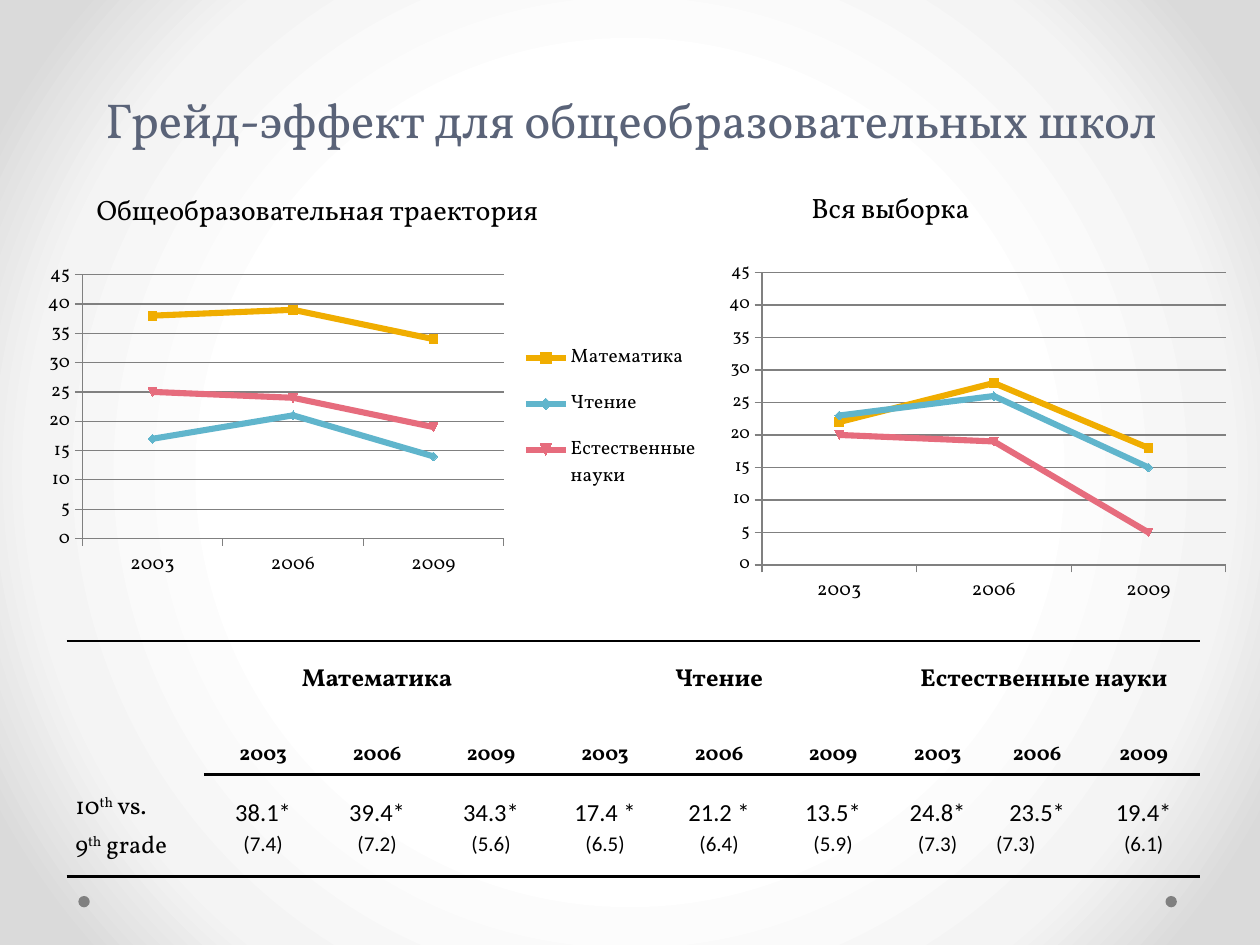
from dataclasses import dataclass
from lxml import etree
from pptx import Presentation, util as u
from pptx.chart.data import CategoryChartData
from pptx.dml.color import RGBColor
from pptx.enum import chart as ch, shapes, text
from pptx.oxml import ns, parse_xml

Pt = u.Pt
MID, LEFT = text.PP_ALIGN.CENTER, text.PP_ALIGN.LEFT
YEARS = ["2003", "2006", "2009"]


@dataclass(frozen=True)
class Theme:
    serif: str = "Vollkorn"
    sans: str = "Calibri"
    ink: str = "000000"
    title: str = "5A6378"
    gray: str = "808080"
    lines: tuple = ("F0AD00", "60B5CC", "E66C7D")
    stops: tuple = ((50, "FFFFFF"), (76, "F4F4F4"), (92, "DADADA"))
    huge: float = 28
    head: float = 16
    body: float = 14
    small: float = 12
    axis: float = 11


class Deck:
    """Build slide parts in one style."""

    def __init__(self, theme):
        self.t = theme
        self.prs = Presentation()
        self.prs.slide_width, self.prs.slide_height = Pt(720), Pt(540)
        self.slide = self.prs.slides.add_slide(self.prs.slide_layouts[6])

    def back(self):
        fill = self.slide.background.fill
        fill.gradient()
        grad = self.slide.background._cSld.find(".//" + ns.qn("a:gradFill"))
        stops = "".join(
            f'<a:gs pos="{pos * 1000}"><a:srgbClr val="{tint}"/></a:gs>'
            for pos, tint in self.t.stops)
        new = parse_xml(
            f'<a:gradFill {ns.nsdecls("a")} rotWithShape="1"><a:gsLst>{stops}</a:gsLst>'
            '<a:path path="circle"><a:fillToRect l="50000" t="50000" r="50000" b="50000"/>'
            '</a:path></a:gradFill>')
        grad.getparent().replace(grad, new)

    def font(self, font, size, tint=None, face=None, bold=False):
        font.size, font.bold = Pt(size), bold
        font.name = face or self.t.serif
        font.color.rgb = RGBColor.from_string(tint or self.t.ink)

    def dot(self, x, y, size):
        dot = self.slide.shapes.add_shape(
            shapes.MSO_SHAPE.OVAL, Pt(x), Pt(y), Pt(size), Pt(size))
        dot.shadow.inherit = False
        dot.fill.solid()
        dot.fill.fore_color.rgb = RGBColor.from_string(self.t.gray)
        dot.line.fill.background()

    def text(self, box, words, size, tint=None, align=LEFT, space=None):
        frame = self.slide.shapes.add_textbox(*map(Pt, box)).text_frame
        frame.word_wrap = True
        frame.text = words
        para = frame.paragraphs[0]
        para.alignment = align
        self.font(para.runs[0].font, size, tint)
        if space:
            frame.vertical_anchor = text.MSO_ANCHOR.BOTTOM
            para.line_spacing = Pt(space)

    def layout(self, owner, index, rect, inner=False):
        for old in owner.findall(ns.qn("c:layout")):
            owner.remove(old)
        node = etree.Element(ns.qn("c:layout"))
        man = etree.SubElement(node, ns.qn("c:manualLayout"))
        pairs = [("layoutTarget", "inner")] if inner else []
        pairs += [("xMode", "edge"), ("yMode", "edge"), *zip("xywh", rect)]
        for tag, val in pairs:
            etree.SubElement(man, ns.qn("c:" + tag)).set("val", str(val))
        owner.insert(index, node)

    def chart(self, box, data, size, plot, key=None):
        cats = CategoryChartData()
        cats.categories = YEARS
        for name, vals in data.items():
            cats.add_series(name, vals)
        chart = self.slide.shapes.add_chart(
            ch.XL_CHART_TYPE.LINE_MARKERS, *map(Pt, box), cats).chart
        self.font(chart.font, size)
        chart.has_title = False
        chart.has_legend = bool(key)
        if key:
            legend = chart.legend
            legend.position = ch.XL_LEGEND_POSITION.RIGHT
            legend.include_in_layout = False
            self.font(legend.font, self.t.axis)
            self.layout(legend._element, 1, key)
        gray = RGBColor.from_string(self.t.gray)
        val, cat = chart.value_axis, chart.category_axis
        val.minimum_scale, val.maximum_scale, val.major_unit = 0, 45, 5
        val.has_major_gridlines = True
        self.font(cat.tick_labels.font, self.t.axis)
        for axis in (val, cat):
            axis.major_tick_mark = ch.XL_TICK_MARK.OUTSIDE
            axis.format.line.color.rgb = gray
        val.major_gridlines.format.line.color.rgb = gray
        chart.plots[0].vary_by_categories = False
        for row, tint in zip(chart.plots[0].series, self.t.lines):
            color = RGBColor.from_string(tint)
            row.smooth = False
            row.format.line.width = Pt(3.5)
            row.format.line.color.rgb = color
            row.marker.size = 5
            row.marker.format.fill.solid()
            row.marker.format.fill.fore_color.rgb = color
            row.marker.format.line.color.rgb = color
        self.layout(chart._chartSpace.find(".//" + ns.qn("c:plotArea")), 0, plot, True)

    def grid(self, box, cols, rows):
        grid = self.slide.shapes.add_table(len(rows), len(cols), *map(Pt, box)).table
        grid.first_row = grid.horz_banding = False
        style = grid._tbl.tblPr.find(ns.qn("a:tableStyleId"))
        style.text = "{2D5ABB26-0587-4C30-8999-92F81FD0307C}"
        for col, wide in zip(grid.columns, cols):
            col.width = Pt(wide)
        for row, high in zip(grid.rows, rows):
            row.height = Pt(high)
        for cell in grid.iter_cells():
            cell.fill.background()
            cell.margin_left = cell.margin_right = Pt(5)
            cell.margin_top = cell.margin_bottom = 0
            cell.vertical_anchor = text.MSO_ANCHOR.MIDDLE
        return grid

    def rule(self, cell, side):
        line = parse_xml(
            f'<a:ln{side} {ns.nsdecls("a")} w="{Pt(1.5)}"><a:solidFill>'
            f'<a:srgbClr val="{self.t.ink}"/></a:solidFill></a:ln{side}>')
        cell._tc.get_or_add_tcPr().insert(0, line)

    def cell(self, cell, words, sizes, space=1, face=None, bold=False, align=MID):
        cell.text_frame.text = words
        for para, size in zip(cell.text_frame.paragraphs, sizes):
            para.alignment, para.line_spacing = align, space
            for run in para.runs:
                self.font(run.font, size, face=face, bold=bold)

    def grade(self, cell):
        size = self.t.body
        self.cell(cell, "10\n9", (size, size), 1.15, align=LEFT)
        for para, tail in zip(cell.text_frame.paragraphs, (" vs.", " grade")):
            for words, lift in (("th", 30000), (tail, 0)):
                run = para.add_run()
                run.text = words
                self.font(run.font, size)
                run._r.get_or_add_rPr().set("baseline", str(lift))


def main():
    t = Theme()
    deck = Deck(t)
    names = ["Математика", "Чтение", "Естественные науки"]
    marks = ["38.1*", "39.4*", "34.3*", "17.4 *", "21.2 *", "13.5*", "24.8*", "23.5*", "19.4*"]
    errs = [7.4, 7.2, 5.6, 6.5, 6.4, 5.9, 7.3, 7.3, 6.1]
    track = [(38, 39, 34), (17, 21, 14), (25, 24, 19)]
    whole = [(22, 28, 18), (23, 26, 15), (20, 19, 5)]

    deck.back()
    for x in (666, 44.8):
        deck.dot(x, 512, 6.5)
    deck.text((36.7, 0, 648, 88.5), "Грейд-эффект для общеобразовательных школ",
              t.huge, t.title, MID, 58)
    deck.text((48.2, 106.5, 278, 26.6), "Общеобразовательная траектория", t.head)
    deck.text((456.5, 105.1, 245, 26.6), "Вся выборка", t.head)

    grid = deck.grid((38, 366.2, 648, 134.7),
                     [78.5] + [67.7, 62.6] * 3 + [56.9, 56.9, 64.8], [45.4, 31, 58.3])
    for i, name in enumerate(names):
        first = grid.cell(0, 3 * i + 1)
        first.merge(grid.cell(0, 3 * i + 3))
        deck.cell(first, name, [t.body], bold=True)
    deck.grade(grid.cell(2, 0))
    for i, (mark, err) in enumerate(zip(marks, errs)):
        deck.cell(grid.cell(1, i + 1), YEARS[i % 3], [t.small], 1.5, bold=True)
        low = grid.cell(2, i + 1)
        deck.cell(low, f"{mark}\n({err})", (t.body, t.small), 1.15, t.sans)
        deck.rule(grid.cell(1, i + 1), "B")
    grid.cell(2, 8).text_frame.paragraphs[1].alignment = LEFT
    for i in range(10):
        deck.rule(grid.cell(0, i), "T")
        deck.rule(grid.cell(2, i), "B")
        if i:
            deck.rule(grid.cell(2, i), "T")

    deck.chart((14.4, 133.9, 408.2, 209.5), dict(zip(names, track)),
               10.5, (0.08, 0.11, 0.59, 0.72), (0.69, 0.25, 0.26, 0.5))
    deck.chart((411.9, 145.6, 294.5, 203.8),
               {f"Series {i}": vals for i, vals in enumerate(whole, 1)},
               10, (0.08, 0.05, 0.9, 0.82))
    deck.prs.save("out.pptx")


if __name__ == "__main__":
    main()
